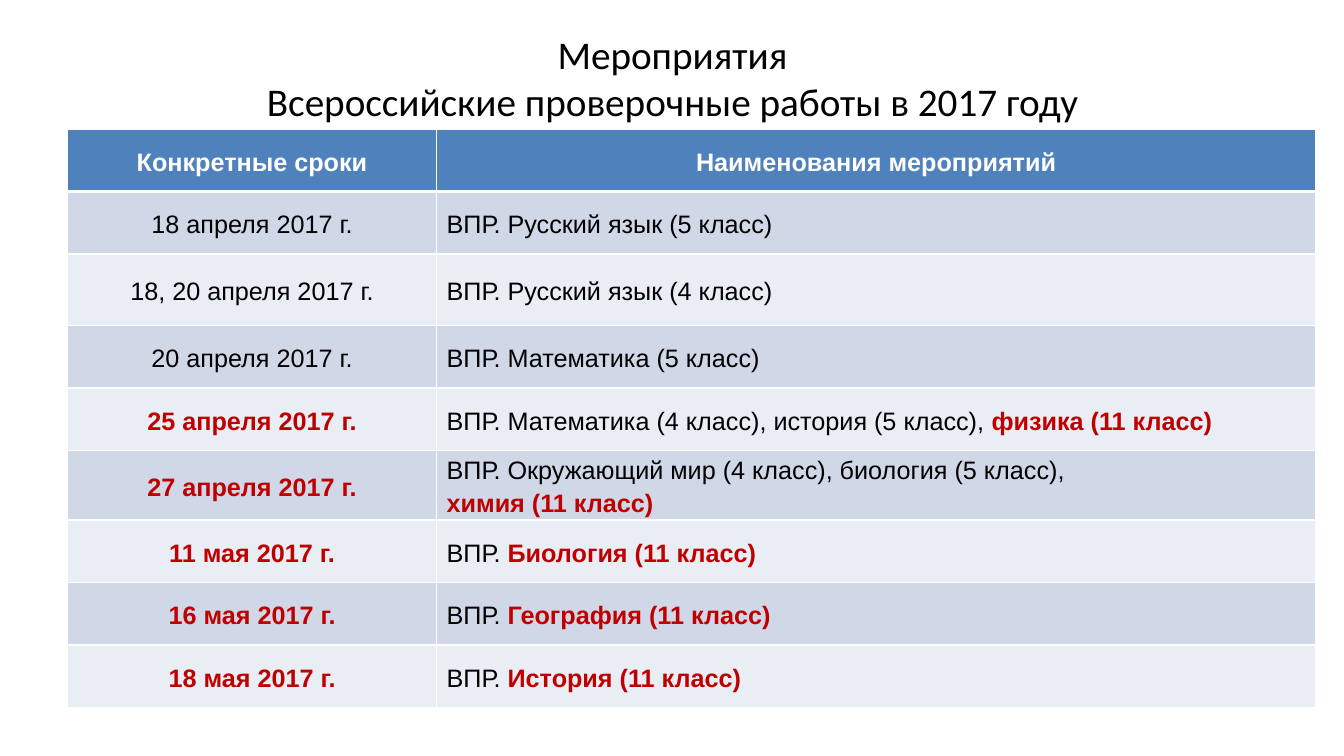
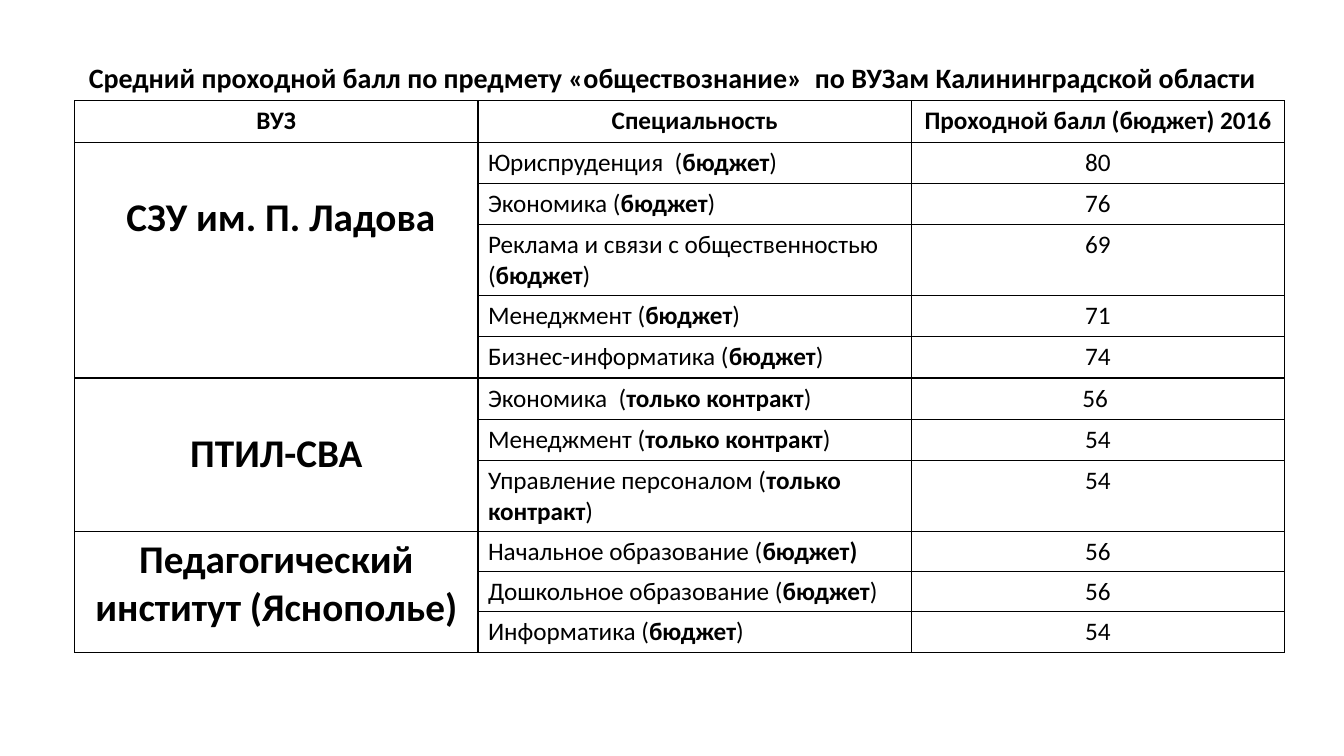
from lxml import etree
from pptx import Presentation
from pptx import util as u
from pptx.dml.color import RGBColor
from pptx.enum import text
from pptx.oxml import ns

BLACK = RGBColor(0x00, 0x00, 0x00)
WHITE = RGBColor(0xFF, 0xFF, 0xFF)
RED = RGBColor(0xC0, 0x00, 0x00)
BLUE = RGBColor(0x4F, 0x81, 0xBD)
BANDS = (RGBColor(0xD0, 0xD8, 0xE8), RGBColor(0xE9, 0xED, 0xF4))
LEFT, CENTER = text.PP_ALIGN.LEFT, text.PP_ALIGN.CENTER
MIDDLE, TOP = text.MSO_ANCHOR.MIDDLE, text.MSO_ANCHOR.TOP
TITLE_BOX = (0.67, 0.3, 12, 0.93)

EVENTS = [
    ("18 апреля 2017 г.", "ВПР. Русский язык (5 класс)"),
    ("18, 20 апреля 2017 г.", "ВПР. Русский язык (4 класс)"),
    ("20 апреля 2017 г.", "ВПР. Математика (5 класс)"),
    ("*25 апреля 2017 г.*", "ВПР. Математика (4 класс), история (5 класс), *физика (11 класс)*"),
    ("*27 апреля 2017 г.*", "ВПР. Окружающий мир (4 класс), биология (5 класс),\n*химия (11 класс)*"),
    ("*11 мая 2017 г.*", "ВПР. *Биология (11 класс)*"),
    ("*16 мая 2017 г.*", "ВПР. *География (11 класс)*"),
    ("*18 мая 2017 г.*", "ВПР. *История (11 класс)*"),
]
EVENT_ROWS = [0.62, 0.62, 0.71, 0.62, 0.62, 0.69, 0.62, 0.62, 0.62]

UNIVERSITIES = [
    ("СЗУ им. П. Ладова", (0.19, 0.52), [
        ("Юриспруденция  (*бюджет*)", "80"),
        ("Экономика (*бюджет*)", "76"),
        ("Реклама и связи с общественностью (*бюджет*)", "69"),
        ("Менеджмент (*бюджет*)", "71"),
        ("Бизнес-информатика (*бюджет*)", "74")]),
    ("ПТИЛ-СВА", (0.1, 0.52), [
        ("Экономика  (*только контракт*)", "56 "),
        ("Менеджмент (*только контракт*)", "54"),
        ("Управление персоналом (*только контракт*)", "54")]),
    ("Педагогический институт (Яснополье)", (0.1, 0.05), [
        ("Начальное образование (*бюджет)*", "56"),
        ("Дошкольное образование (*бюджет*)", "56"),
        ("Информатика (*бюджет*)", "54")]),
]
SCORE_ROWS = [0.41, 0.41, 0.41, 0.7, 0.41, 0.41, 0.41, 0.41, 0.7, 0.4, 0.4, 0.4]


def write(tf, content, font="Calibri", size=18, color=BLACK, bold=False,
          align=CENTER, accent=None, spacing=None):
    """Fill a text frame; a newline starts a paragraph, asterisks enclose emphasis."""
    for i, line in enumerate(content.split("\n")):
        p = tf.paragraphs[0] if i == 0 else tf.add_paragraph()
        p.alignment = align
        if spacing:
            p.line_spacing = spacing
        for j, part in enumerate(line.split("*")):
            if part:
                r = p.add_run()
                r.text = part
                r.font.name, r.font.size = font, u.Pt(size)
                r.font.bold = bold or j % 2 == 1
                r.font.color.rgb = accent if accent and j % 2 else color


def add_title(s, box, content, **fmt):
    """Place a centred slide title in the box."""
    tf = s.shapes.add_textbox(*map(u.Inches, box)).text_frame
    tf.word_wrap = True
    tf.vertical_anchor = MIDDLE
    write(tf, content, **fmt)


def add_grid(s, left, top, cols, rows):
    """Add an unbanded table with the given column widths and row heights."""
    frame = s.shapes.add_table(len(rows), len(cols), u.Inches(left), u.Inches(top),
                               u.Inches(sum(cols)), u.Inches(sum(rows)))
    table = frame.table
    table.first_row = table.horz_banding = False
    for col, width in zip(table.columns, cols):
        col.width = u.Inches(width)
    for row, height in zip(table.rows, rows):
        row.height = u.Inches(height)
    return table


def style_cell(cell, line, fill=None, anchor=TOP, inset=(0.1, 0.05), top=1, bottom=1):
    """Set the borders, fill, anchor and insets of a cell."""
    tc_pr = cell._tc.get_or_add_tcPr()
    for side, width in zip("LRTB", (1, 1, top, bottom)):
        ln = etree.SubElement(tc_pr, ns.qn("a:ln" + side), w=str(u.Pt(width)))
        solid = etree.SubElement(ln, ns.qn("a:solidFill"))
        etree.SubElement(solid, ns.qn("a:srgbClr"), val=str(line))
    if fill is None:
        cell.fill.background()
    else:
        cell.fill.solid()
        cell.fill.fore_color.rgb = fill
    cell.vertical_anchor = anchor
    cell.margin_left, cell.margin_top = map(u.Inches, inset)
    cell.margin_right, cell.margin_bottom = u.Inches(0.1), u.Inches(inset[1])


def events_slide(s):
    """Build the schedule of events."""
    add_title(s, TITLE_BOX, "Мероприятия\nВсероссийские проверочные работы в 2017 году", size=28)
    table = add_grid(s, 0.67, 1.28, [3.66, 8.72], EVENT_ROWS)
    header = ("Конкретные сроки", "Наименования мероприятий")
    for i, row in enumerate([header] + EVENTS):
        head = i == 0
        for j, content in enumerate(row):
            cell = table.cell(i, j)
            style_cell(cell, WHITE, BLUE if head else BANDS[(i - 1) % 2], MIDDLE, (0.1, 0),
                       top=3 if i == 1 else 1, bottom=3 if head else 1)
            write(cell.text_frame, content, font="Arial", color=WHITE if head else BLACK,
                  bold=head, accent=RED, spacing=1.15,
                  align=CENTER if head or j == 0 else LEFT)


def scores_slide(s):
    """Build the table of passing scores by university."""
    add_title(s, TITLE_BOX, "Средний проходной балл по предмету «обществознание»  "
              "по ВУЗам Калининградской области", size=20, bold=True)
    table = add_grid(s, 0.74, 1, [4, 4.3, 3.7], SCORE_ROWS)
    for cell in table.iter_cells():
        style_cell(cell, BLACK)
    for j, content in enumerate(("ВУЗ", "Специальность", "Проходной балл (бюджет) 2016")):
        write(table.cell(0, j).text_frame, content, bold=True)
    first = 1
    for name, inset, programmes in UNIVERSITIES:
        cell = table.cell(first, 0)
        cell.merge(table.cell(first + len(programmes) - 1, 0))
        cell.margin_left, cell.margin_top = map(u.Inches, inset)
        write(cell.text_frame, name, size=28, bold=True)
        for i, (programme, score) in enumerate(programmes, first):
            write(table.cell(i, 1).text_frame, programme, align=LEFT)
            write(table.cell(i, 2).text_frame, score)
        first += len(programmes)


def main():
    """Build and save the presentation."""
    prs = Presentation()
    prs.slide_width, prs.slide_height = u.Inches(13.33), u.Inches(7.5)
    for build in (events_slide, scores_slide):
        build(prs.slides.add_slide(prs.slide_layouts[6]))
    prs.save("out.pptx")


if __name__ == "__main__":
    main()
